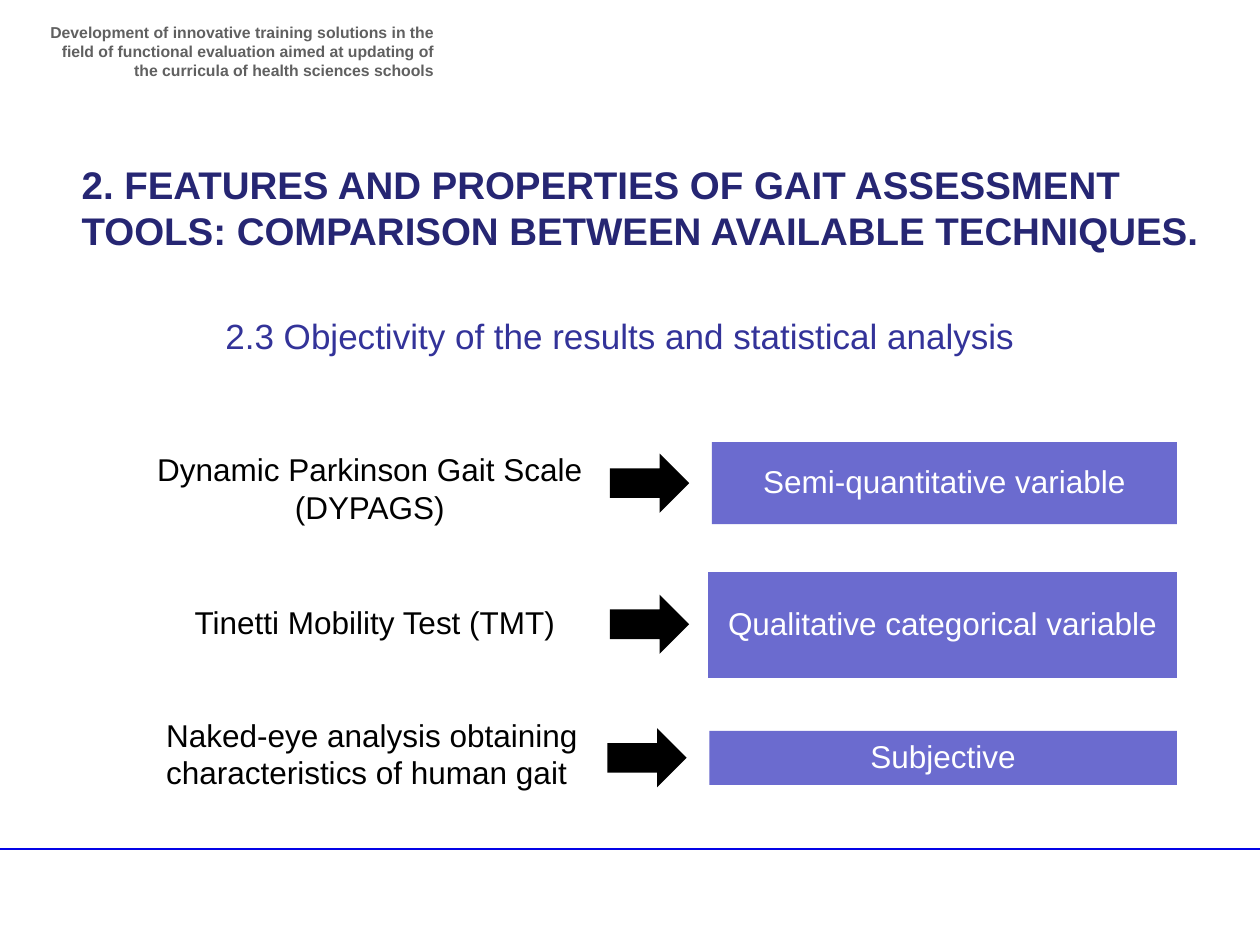
from dataclasses import dataclass, field

import pptx
import pptx.dml.color
import pptx.enum.shapes
import pptx.enum.text
import pptx.oxml.ns
import pptx.slide
import pptx.util
from lxml import etree

Inches = pptx.util.Inches
Align = pptx.enum.text.PP_ALIGN
Preset = pptx.enum.shapes.MSO_SHAPE
BLACK = "000000"
VIOLET = "6B6BCF"


@dataclass
class Label:
    words: str
    left: float
    top: float
    width: float
    height: float
    size: int = 18
    colour: str = BLACK
    bold: bool = False
    align: Align = Align.LEFT


@dataclass
class Result:
    words: str
    left: float
    top: float
    height: float
    arrow_left: float
    arrow_top: float
    right: float = field(default=9.34)


LABELS = [
    Label("Development of innovative training solutions in the ﬁeld of functional "
          "evaluation aimed at updating of the curricula of health sciences schools",
          0.28, 0.13, 3.26, 0.47, 9, "606060", True, Align.RIGHT),
    Label("2. FEATURES AND PROPERTIES OF GAIT ASSESSMENT TOOLS: "
          "COMPARISON BETWEEN AVAILABLE TECHNIQUES.",
          0.55, 1.23, 9.09, 0.84, 22, "262673", True),
    Label("2.3 Objectivity of the results and statistical analysis",
          1.69, 2.45, 6.61, 0.77, 20, "333399"),
    Label("Dynamic Parkinson Gait Scale (DYPAGS)",
          0.75, 3.52, 4.37, 0.71, align=Align.CENTER),
    Label("Tinetti Mobility Test (TMT)",
          0.79, 4.74, 4.37, 0.4, align=Align.CENTER),
    Label("Naked-eye analysis obtaining characteristics of human gait",
          1.22, 5.63, 4.37, 0.71),
]

RESULTS = [
    Result("Semi-quantitative variable", 5.65, 3.51, 0.65, 4.84, 3.6),
    Result("Qualitative categorical variable", 5.62, 4.54, 0.84, 4.84, 4.72),
    Result("Subjective", 5.63, 5.8, 0.43, 4.82, 5.78),
]


def rgb(code: str) -> pptx.dml.color.RGBColor:
    return pptx.dml.color.RGBColor.from_string(code)


def set_all(target: object, values: dict) -> None:
    for name, value in values.items():
        setattr(target, name, value)


def write(box, words: str, size: int, colour: str, bold: bool, align: Align):
    box.text_frame.word_wrap = True
    para = box.text_frame.paragraphs[0]
    para.alignment = align
    span = para.add_run()
    span.text = words
    set_all(span.font, {"name": "Arial", "size": pptx.util.Pt(size), "bold": bold})
    span.font.color.rgb = rgb(colour)
    return para


def add_label(page: pptx.slide.Slide, label: Label) -> None:
    place = map(Inches, (label.left, label.top, label.width, label.height))
    box = page.shapes.add_textbox(*place)
    write(box, label.words, label.size, label.colour, label.bold, label.align)


def add_block(page: pptx.slide.Slide, preset: Preset, left: float, top: float,
              width: float, height: float, colour: str):
    block = page.shapes.add_shape(preset, *map(Inches, (left, top, width, height)))
    block.shadow.inherit = False
    block.fill.solid()
    block.fill.fore_color.rgb = rgb(colour)
    block.line.fill.background()
    return block


def add_result(page: pptx.slide.Slide, result: Result) -> None:
    add_block(page, Preset.RIGHT_ARROW, result.arrow_left, result.arrow_top,
              0.63, 0.47, BLACK)
    block = add_block(page, Preset.RECTANGLE, result.left, result.top,
                      result.right - result.left, result.height, VIOLET)
    margins = ("margin_left", "margin_right", "margin_top", "margin_bottom")
    set_all(block.text_frame, dict.fromkeys(margins, Inches(0.01)))
    block.text_frame.vertical_anchor = pptx.enum.text.MSO_ANCHOR.MIDDLE
    para = write(block, result.words, 18, "FFFFFF", False, Align.CENTER)
    para.line_spacing = 0.9


def add_footer_rule(page: pptx.slide.Slide) -> None:
    rule = page.shapes.add_connector(
        pptx.enum.shapes.MSO_CONNECTOR.STRAIGHT,
        *map(Inches, (-0.05, 6.74, 10, 6.74)))
    rule.line.color.rgb = rgb("0404E6")
    rule.line.width = pptx.util.Pt(1)
    etree.SubElement(rule._element.spPr, pptx.oxml.ns.qn("a:effectLst"))


def main() -> None:
    deck = pptx.Presentation()
    set_all(deck, {"slide_width": Inches(10), "slide_height": Inches(7.5)})
    page = deck.slides.add_slide(deck.slide_layouts[6])
    add_footer_rule(page)
    for label in LABELS:
        add_label(page, label)
    for result in RESULTS:
        add_result(page, result)
    deck.save("out.pptx")


if __name__ == "__main__":
    main()
